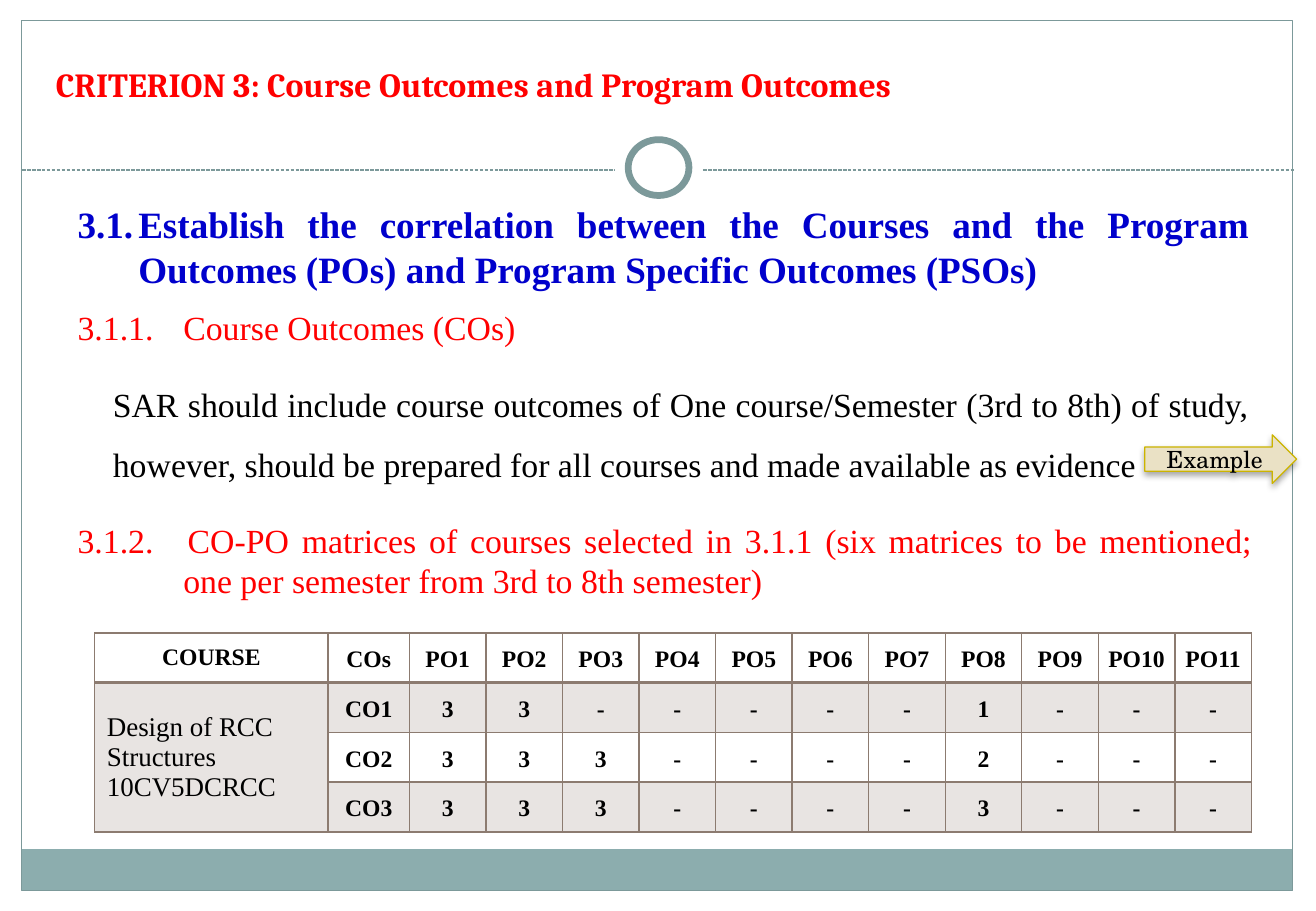
from lxml import etree
from pptx import Presentation
from pptx.dml.color import RGBColor
from pptx.enum.dml import MSO_LINE
from pptx.enum.shapes import MSO_CONNECTOR, MSO_SHAPE
from pptx.enum.text import MSO_ANCHOR, MSO_AUTO_SIZE, PP_ALIGN
from pptx.oxml.ns import qn
from pptx.util import Inches, Pt

LEFT, CENTER, JUSTIFY = PP_ALIGN.LEFT, PP_ALIGN.CENTER, PP_ALIGN.JUSTIFY
MIDDLE, BOTTOM = MSO_ANCHOR.MIDDLE, MSO_ANCHOR.BOTTOM
RECTANGLE, OVAL, ARROW = MSO_SHAPE.RECTANGLE, MSO_SHAPE.OVAL, MSO_SHAPE.RIGHT_ARROW
TITLE_ONLY = 5

COLORS = {
    "white": "FFFFFF", "black": "000000", "red": "FF0000", "blue": "0000CC",
    "teal": "7C999A", "band": "8CADAE", "sand": "EAE1C5", "gold": "CCB400",
    "taupe": "8C7B70",
}
SERIF = "Times New Roman"

COURSE_ROWS = [
    ["COURSE", "COs"] + [f"PO{number}" for number in range(1, 12)],
    ["Design of RCC Structures\n10CV5DCRCC", "CO1", *"33-----1---"],
    ["", "CO2", *"333----2---"],
    ["", "CO3", *"333----3---"],
]
COLUMN_WIDTHS = [1.92, 0.67] + [0.63] * 11
ROW_HEIGHT = 0.41


def rgb(color):
    return RGBColor.from_string(COLORS[color])


class SlideBuilder:
    """Holds the slide and its default font, and adds styled elements."""

    def __init__(self, slide, font=SERIF):
        self.slide = slide
        self.font = font

    def format_text(self, text_frame, size, color="black", bold=False, font=None,
                    align=LEFT, spacing=None, indent=0):
        for paragraph in text_frame.paragraphs:
            paragraph.alignment = align
            if spacing:
                paragraph.line_spacing = spacing
            if indent:
                properties = paragraph._p.get_or_add_pPr()
                properties.set("marL", str(Inches(indent)))
                properties.set("indent", str(-Inches(indent)))
            for run in paragraph.runs:
                run.font.name = font or self.font
                run.font.size = Pt(size)
                run.font.bold = bold
                run.font.color.rgb = rgb(color)

    def title(self, text, left, top, width, height, **style):
        shape = self.slide.shapes.title
        shape.left, shape.top = Inches(left), Inches(top)
        shape.width, shape.height = Inches(width), Inches(height)
        text_frame = shape.text_frame
        text_frame.text = text
        text_frame.auto_size = MSO_AUTO_SIZE.NONE
        text_frame.vertical_anchor = BOTTOM
        self.format_text(text_frame, **style)

    def text(self, text, left, top, width, height, **style):
        shape = self.slide.shapes.add_textbox(
            Inches(left), Inches(top), Inches(width), Inches(height))
        text_frame = shape.text_frame
        text_frame.word_wrap = True
        text_frame.auto_size = MSO_AUTO_SIZE.SHAPE_TO_FIT_TEXT
        text_frame.text = text
        self.format_text(text_frame, **style)

    def shape(self, kind, left, top, width, height, fill=None, line=None, line_width=0.75):
        shape = self.slide.shapes.add_shape(
            kind, Inches(left), Inches(top), Inches(width), Inches(height))
        shape.shadow.inherit = False
        if fill:
            shape.fill.solid()
            shape.fill.fore_color.rgb = rgb(fill)
        else:
            shape.fill.background()
        if line:
            shape.line.color.rgb = rgb(line)
            shape.line.width = Pt(line_width)
        else:
            shape.line.fill.background()
        return shape

    def dashed_line(self, left, right, y, color):
        connector = self.slide.shapes.add_connector(
            MSO_CONNECTOR.STRAIGHT, Inches(left), Inches(y), Inches(right), Inches(y))
        connector.line.color.rgb = rgb(color)
        connector.line.width = Pt(0.75)
        connector.line.dash_style = MSO_LINE.SQUARE_DOT
        etree.SubElement(connector._element.spPr, qn("a:effectLst"))

    def arrow(self, text, left, top, width, height, **style):
        shape = self.shape(ARROW, left, top, width, height, "sand", "gold")
        effects = shape._element.spPr.find(qn("a:effectLst"))
        shadow = etree.SubElement(
            effects, qn("a:outerShdw"), blurRad=str(Pt(4)), dist=str(Pt(2)),
            dir="5400000", rotWithShape="0")
        shadow_color = etree.SubElement(shadow, qn("a:srgbClr"), val=COLORS["black"])
        etree.SubElement(shadow_color, qn("a:alpha"), val="35000")
        shape.text_frame.text = text
        shape.text_frame.vertical_anchor = MIDDLE
        self.format_text(shape.text_frame, align=CENTER, **style)

    def cell_borders(self, cell, row):
        """Draw thin borders, with a thicker rule under the header row."""
        properties = cell._tc.get_or_add_tcPr()
        widths = {"lnL": 1, "lnR": 1, "lnT": 2 if row == 1 else 1, "lnB": 2 if row == 0 else 1}
        for side, width in widths.items():
            border = etree.SubElement(properties, qn(f"a:{side}"), w=str(Pt(width)))
            fill = etree.SubElement(border, qn("a:solidFill"))
            etree.SubElement(fill, qn("a:srgbClr"), val=COLORS["taupe"])

    def cell_fill(self, cell, shaded):
        if not shaded:
            cell.fill.background()
            return
        cell.fill.solid()
        cell.fill.fore_color.rgb = rgb("taupe")
        color = cell._tc.tcPr.find(qn("a:solidFill")).find(qn("a:srgbClr"))
        etree.SubElement(color, qn("a:alpha"), val="20000")

    def course_table(self, left, top):
        table = self.slide.shapes.add_table(
            len(COURSE_ROWS), len(COLUMN_WIDTHS), Inches(left), Inches(top),
            Inches(sum(COLUMN_WIDTHS)), Inches(ROW_HEIGHT * len(COURSE_ROWS))).table
        table.first_row = table.horz_banding = False
        for column, width in zip(table.columns, COLUMN_WIDTHS):
            column.width = Inches(width)
        for row in table.rows:
            row.height = Inches(ROW_HEIGHT)
        table.cell(1, 0).merge(table.cell(3, 0))
        for row, values in enumerate(COURSE_ROWS):
            for column, value in enumerate(values):
                cell = table.cell(row, column)
                self.cell_borders(cell, row)
                self.cell_fill(cell, row in (1, 3) or (column == 0 and row > 0))
                cell.vertical_anchor = MIDDLE
                if cell.is_spanned:
                    continue
                cell.text_frame.text = value
                if cell.is_merge_origin:
                    self.format_text(cell.text_frame, 16)
                    continue
                if column > 0:
                    cell.margin_left = cell.margin_right = Inches(0.07)
                    cell.margin_top = cell.margin_bottom = 0
                self.format_text(cell.text_frame, 14, bold=True, align=CENTER,
                                 spacing=1.15 if column else None)


def main():
    presentation = Presentation()
    presentation.slide_width = Inches(10.83)
    presentation.slide_height = Inches(7.5)
    slide = presentation.slides.add_slide(presentation.slide_layouts[TITLE_ONLY])
    builder = SlideBuilder(slide)

    builder.shape(RECTANGLE, 0.18, 6.99, 10.46, 0.34, fill="band")
    builder.shape(RECTANGLE, 0.18, 0.17, 10.46, 7.16, line="teal")
    builder.dashed_line(0.18, 10.65, 1.4, "teal")
    builder.shape(OVAL, 5.06, 1.05, 0.72, 0.67, fill="white")
    builder.shape(OVAL, 5.17, 1.15, 0.5, 0.46, fill="white", line="teal", line_width=4)

    builder.title("CRITERION 3: Course Outcomes and Program Outcomes", 0.36, 0.58, 10.2, 0.33,
                  size=20, color="red", bold=True, font="Cambria", align=JUSTIFY)
    builder.text("3.1.\tEstablish the correlation between the Courses and the Program "
                 "Outcomes (POs) and Program Specific Outcomes (PSOs)", 0.54, 1.61, 9.84, 0.84,
                 size=22, color="blue", bold=True, align=JUSTIFY, indent=0.5)
    builder.text("3.1.1.\tCourse Outcomes (COs)", 0.54, 2.48, 9.84, 0.44,
                 size=20, color="red", indent=0.87)
    builder.text("SAR should include course outcomes of One course/Semester (3rd to 8th) of "
                 "study, however, should be prepared for all courses and made available as "
                 "evidence", 0.83, 2.94, 9.55, 1.05, size=20, align=JUSTIFY, spacing=1.5)
    builder.arrow("Example", 9.42, 3.58, 1.25, 0.4, size=14, font="TeX Gyre Schola")
    builder.text("3.1.2. \tCO-PO matrices of courses selected in 3.1.1 (six matrices to be "
                 "mentioned; one per semester from 3rd to 8th semester)", 0.54, 4.23, 9.87, 0.77,
                 size=20, color="red", align=JUSTIFY, indent=0.87)
    builder.course_table(0.78, 5.21)

    presentation.save("out.pptx")


if __name__ == "__main__":
    main()
